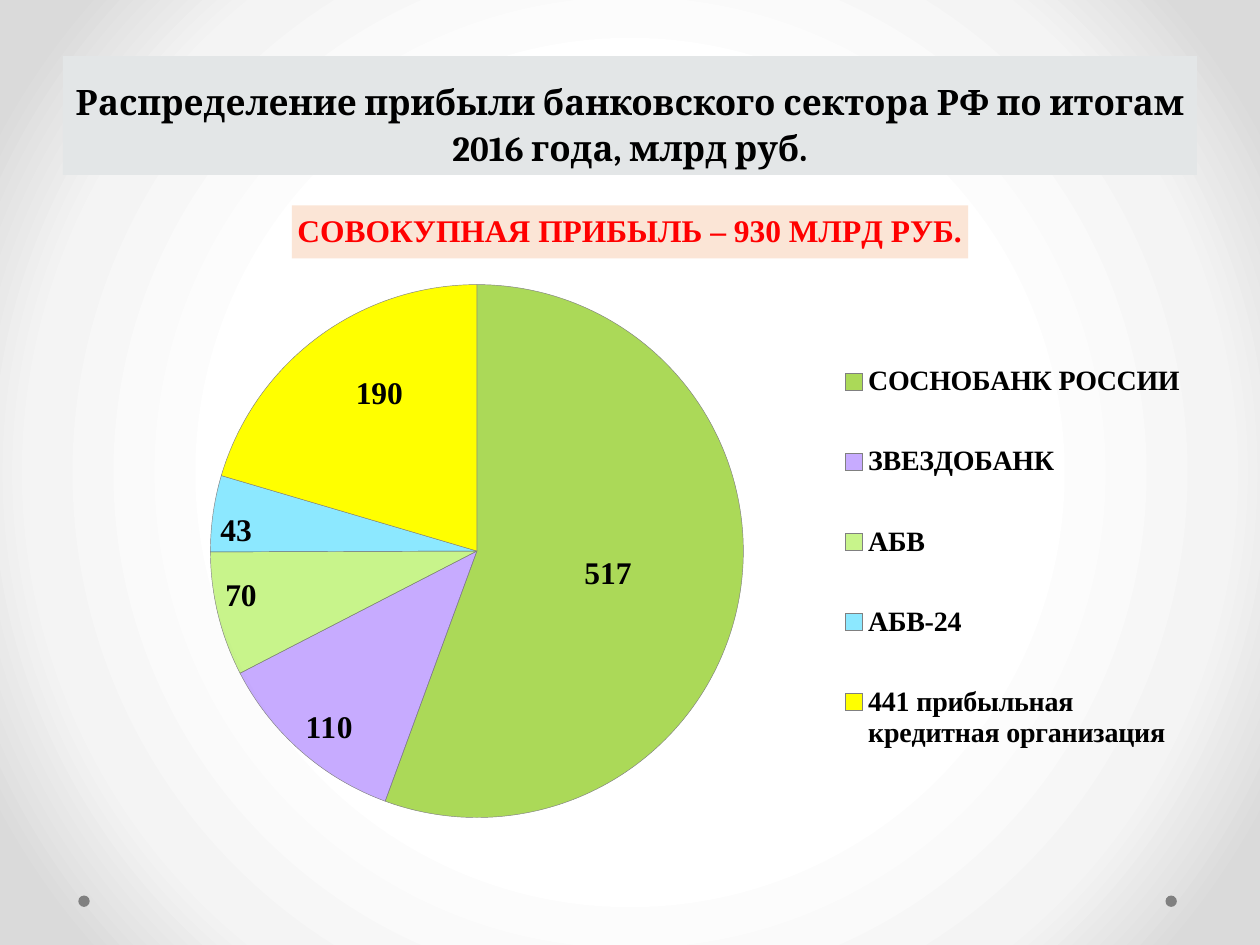
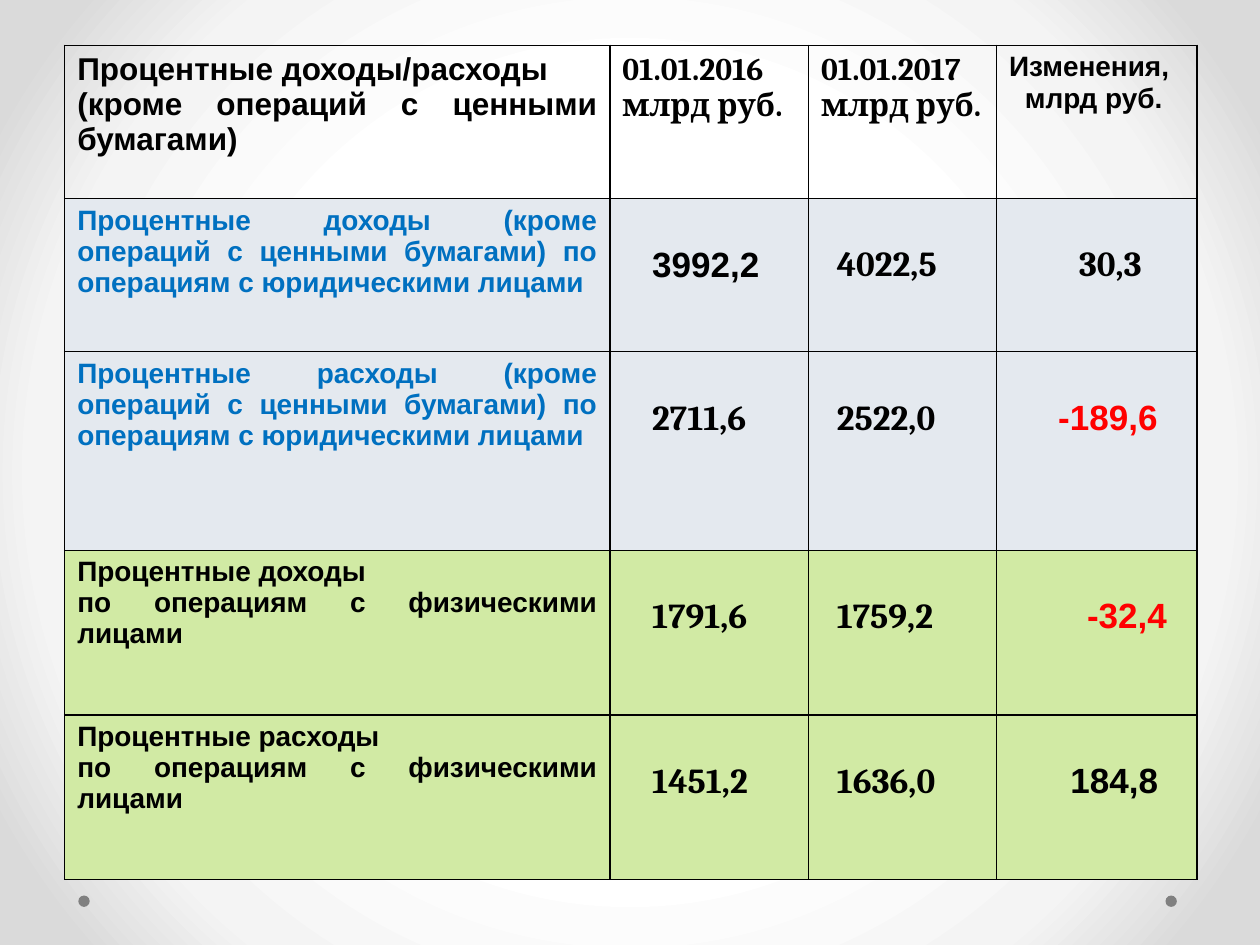
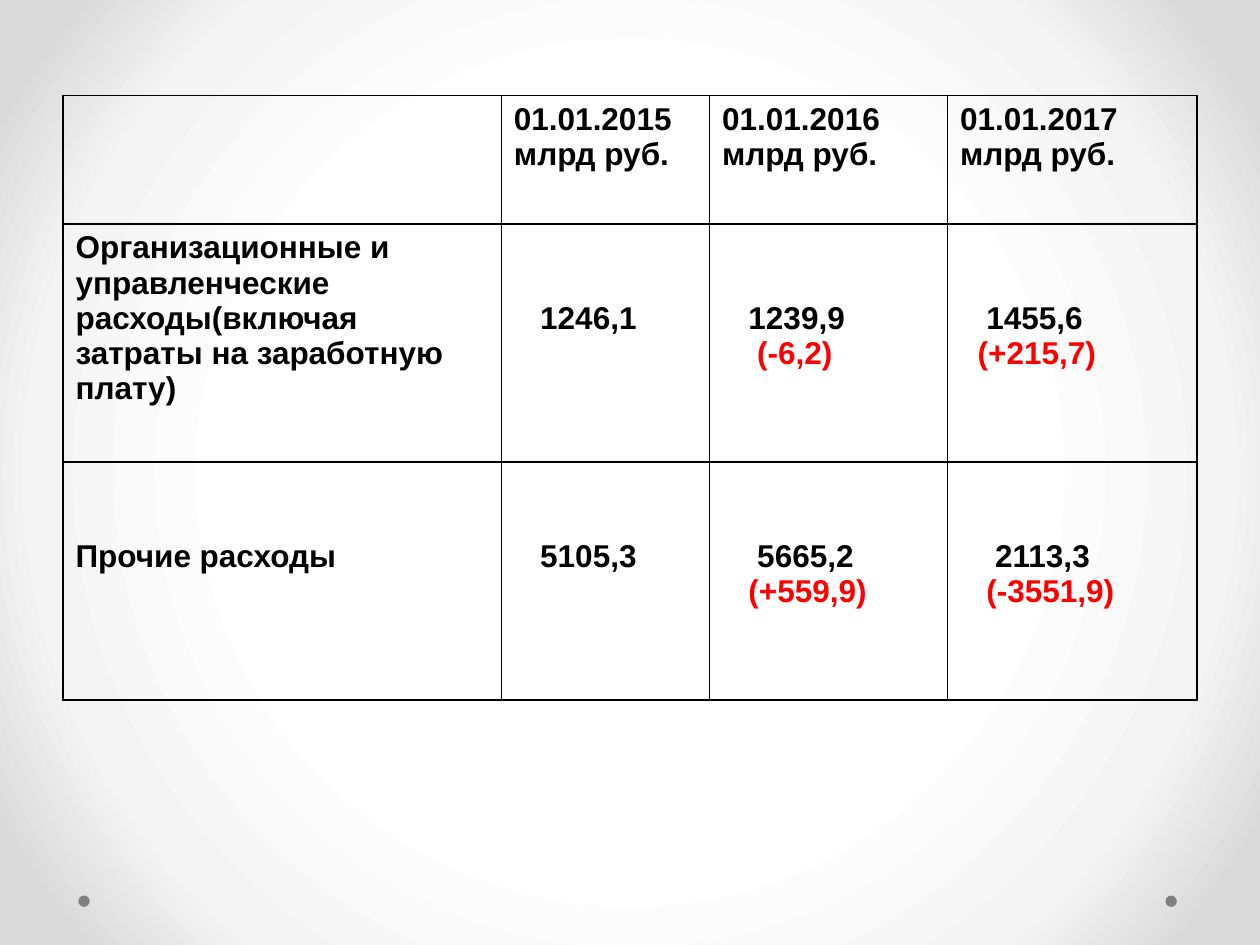
from dataclasses import dataclass
from typing import NamedTuple

from pptx import Presentation
from pptx import oxml as ox
from pptx.chart import data as cd
from pptx.dml import color as dc
from pptx.enum import chart as ec, shapes, text
from pptx.oxml import ns
from pptx.util import Pt

HUES = {
    "ink": "000000", "red": "FF0000", "blue": "0070C0", "dot": "808080",
    "band": "E3E6E7", "peach": "FBE5D6", "cool": "E4E9EF", "lime": "D1EAA4",
    "green": "ABD958", "violet": "9966FF", "leaf": "9BEB2D",
    "sky": "00CCFF", "yellow": "FFFF00",
    "white": "FFFFFF", "pale": "F4F4F4", "gray": "DADADA",
}
STOPS = ((50, "white"), (76, "pale"), (92, "gray"))
SANS, SERIF, ROMAN = "Arial", "Cambria", "Times New Roman"
JUST = text.PP_ALIGN.JUSTIFY
INSIDE, CENTER = ec.XL_LABEL_POSITION.INSIDE_END, ec.XL_LABEL_POSITION.CENTER


class Box(NamedTuple):
    x: float
    y: float
    w: float
    h: float


class Line(NamedTuple):
    text: str
    dent: float = 0
    hue: str = "ink"


@dataclass
class Cell:
    lines: list[Line]
    size: float = 18
    font: str = SANS
    drop: float = 0
    align: text.PP_ALIGN | None = None
    fill: str = ""


@dataclass
class Slice:
    name: str
    value: int
    hue: str
    alpha: int = 100
    spot: ec.XL_LABEL_POSITION = INSIDE


DOTS = [Box(x, 511.75, 6.5, 6.5) for x in (44.75, 666)]
SLICES = [
    Slice("СОСНОБАНК РОССИИ", 517, "green", spot=CENTER),
    Slice("ЗВЕЗДОБАНК", 110, "violet", 55),
    Slice("АБВ", 70, "leaf", 55),
    Slice("АБВ-24", 43, "sky", 45),
    Slice("441 прибыльная кредитная организация", 190, "yellow"),
]


def rgb(hue: str) -> dc.RGBColor:
    return dc.RGBColor.from_string(HUES[hue])


def style(font, size: float, name: str, hue: str = "ink") -> None:
    font.size, font.name, font.bold = Pt(size), name, True
    font.color.rgb = rgb(hue)


def pts(box: Box) -> list[Pt]:
    return [Pt(n) for n in box]


def make(tag: str, **attrs):
    node = ox.xmlchemy.OxmlElement(tag)
    for key, val in attrs.items():
        node.set(key, str(val))
    return node


def nest(top, tag: str, **attrs):
    node = make(tag, **attrs)
    top.append(node)
    return node


def back(slide) -> None:
    slide.background.fill.gradient()
    grad = slide.element.xpath("p:cSld/p:bg//a:gradFill")[0]
    grad.clear()
    stops = nest(grad, "a:gsLst")
    for pos, hue in STOPS:
        stop = nest(stops, "a:gs", pos=pos * 1000)
        nest(stop, "a:srgbClr", val=HUES[hue])
    ring = nest(grad, "a:path", path="circle")
    nest(ring, "a:fillToRect", l=50000, t=50000, r=50000, b=50000)


def start(prs):
    slide = prs.slides.add_slide(prs.slide_layouts[6])
    back(slide)
    for box in DOTS:
        dot = slide.shapes.add_shape(shapes.MSO_SHAPE.OVAL, *pts(box))
        dot.shadow.inherit = False
        dot.fill.solid()
        dot.fill.fore_color.rgb = rgb("dot")
        dot.line.fill.background()
    return slide


def head(slide, words: str) -> None:
    box = slide.shapes.add_textbox(*pts(Box(36, 32, 648, 68)))
    box.fill.solid()
    box.fill.fore_color.rgb = rgb("band")
    frame = box.text_frame
    frame.word_wrap = True
    frame.vertical_anchor = text.MSO_ANCHOR.BOTTOM
    frame.text = words
    para = frame.paragraphs[0]
    para.alignment = text.PP_ALIGN.CENTER
    para.line_spacing = 1.1
    style(para.runs[0].font, 20, SERIF)


def place(node, index: int, **sizes: float) -> None:
    for old in node.findall(ns.qn("c:layout")):
        node.remove(old)
    layout = make("c:layout")
    spot = nest(layout, "c:manualLayout")
    if "w" in sizes:
        if index == 0:
            nest(spot, "c:layoutTarget", val="inner")
        for mode in ("c:xMode", "c:yMode"):
            nest(spot, mode, val="edge")
    for key, val in sizes.items():
        nest(spot, "c:" + key, val=val)
    node.insert(index, layout)


def pie(slide, words: str, parts: list[Slice]) -> None:
    data = cd.CategoryChartData(number_format="#,##0")
    data.categories = [part.name for part in parts]
    data.add_series("Series 1", [part.value for part in parts])
    chart = slide.shapes.add_chart(
        ec.XL_CHART_TYPE.PIE, *pts(Box(36, 106, 648, 376.5)), data).chart
    chart.font.size, chart.font.name = Pt(10), ROMAN
    chart.font.color.rgb = rgb("ink")

    chart.has_title = True
    title = chart.chart_title
    title.text_frame.text = words
    style(title.text_frame.paragraphs[0].runs[0].font, 18, ROMAN, "red")
    title.format.fill.solid()
    title.format.fill.fore_color.rgb = rgb("peach")

    chart.has_legend = True
    chart.legend.position = ec.XL_LEGEND_POSITION.RIGHT
    chart.legend.include_in_layout = False
    style(chart.legend.font, 16, ROMAN)

    plot = chart.plots[0]
    plot.vary_by_categories = True
    plot.has_data_labels = True
    tags = plot.data_labels
    tags.show_value = True
    tags.number_format, tags.number_format_is_linked = "#,##0", False
    tags.position = INSIDE
    style(tags.font, 18, ROMAN)

    for i, part in enumerate(parts):
        point = plot.series[0].points[i]
        point.format.fill.solid()
        point.format.fill.fore_color.rgb = rgb(part.hue)
        point.format.line.color.rgb = rgb("dot")
        point.format.line.width = Pt(0.25)
        style(point.data_label.font, 18, ROMAN)
        point.data_label.position = part.spot

    root = chart.element if hasattr(chart, "element") else chart._chartSpace
    for part, tint in zip(parts, root.xpath(".//c:dPt/c:spPr/a:solidFill/a:srgbClr")):
        if part.alpha < 100:
            nest(tint, "a:alpha", val=part.alpha * 1000)
    place(root.xpath("c:chart/c:plotArea")[0], 0, x=0.13, y=0.15, w=0.47, h=0.81)
    place(root.xpath("c:chart/c:legend")[0], 1, x=0.69, y=0.2, w=0.3, h=0.73)
    place(root.xpath(".//c:dLbl")[-1], 1, x=0.03, y=0.05)


def edge(cell) -> None:
    props = cell._tc.get_or_add_tcPr()
    for i, side in enumerate(("a:lnL", "a:lnR", "a:lnT", "a:lnB")):
        line = make(side, w=Pt(1))
        nest(nest(line, "a:solidFill"), "a:srgbClr", val=HUES["ink"])
        props.insert(i, line)


def write(cell, item: Cell) -> None:
    if item.fill:
        cell.fill.solid()
        cell.fill.fore_color.rgb = rgb(item.fill)
    else:
        cell.fill.background()
    edge(cell)
    cell.margin_top = Pt(3.6 + item.drop)
    cell.text_frame.text = "\n".join(line.text for line in item.lines)
    for para, line in zip(cell.text_frame.paragraphs, item.lines):
        para.alignment = item.align
        if line.dent:
            para._p.get_or_add_pPr().set("marL", str(Pt(line.dent)))
        for run in para.runs:
            style(run.font, item.size, item.font, line.hue)


def grid(slide, x: float, y: float, cols: list[float], rows: list[float],
         cells: list[list[Cell]]) -> None:
    box = Box(x, y, sum(cols), sum(rows))
    table = slide.shapes.add_table(len(rows), len(cols), *pts(box)).table
    table.first_row = table.horz_banding = False
    for col, width in zip(table.columns, cols):
        col.width = Pt(width)
    for row, height, items in zip(table.rows, rows, cells):
        row.height = Pt(height)
        for cell, item in zip(row.cells, items):
            write(cell, item)


def date(year: int, font: str = SANS) -> Cell:
    return Cell([Line(f"01.01.{year}"), Line("млрд руб.")], font=font)


def label(fill: str, hue: str, *words: str) -> Cell:
    return Cell([Line(w, hue=hue) for w in words], 16, align=JUST, fill=fill)


def value(fill: str, words: str, dent: float, font: str = SERIF,
          hue: str = "ink") -> Cell:
    return Cell([Line(words, dent, hue)], 20, font, 23.2, fill=fill)


def cost(*lines: Line) -> Cell:
    return Cell(list(lines), drop=40.4)


def rates() -> list[list[Cell]]:
    firms = "(кроме операций с ценными бумагами) по операциям с юридическими лицами"
    folk = "по операциям с физическими лицами"
    return [
        [Cell([Line("Процентные доходы/расходы"),
               Line("(кроме операций с ценными бумагами)")], align=JUST),
         date(2016, SERIF), date(2017, SERIF),
         Cell([Line("Изменения,"), Line("млрд руб.", 9)], 16, align=JUST)],
        [label("cool", "blue", "Процентные доходы " + firms),
         value("cool", "3992,2", 17, SANS), value("cool", "4022,5", 9),
         value("cool", "30,3", 40)],
        [label("cool", "blue", "Процентные расходы " + firms),
         value("cool", "2711,6", 17), value("cool", "2522,0", 9),
         value("cool", "-189,6", 28, SANS, "red")],
        [label("lime", "ink", "Процентные доходы", folk),
         value("lime", "1791,6", 17), value("lime", "1759,2", 9),
         value("lime", "-32,4", 44.5, SANS, "red")],
        [label("lime", "ink", "Процентные расходы", folk),
         value("lime", "1451,2", 17), value("lime", "1636,0", 9),
         value("lime", "184,8", 35, SANS)],
    ]


def costs() -> list[list[Cell]]:
    return [
        [Cell([]), date(2015), date(2016), date(2017)],
        [Cell([Line("Организационные и управленческие расходы(включая "
                    "затраты на заработную плату)")]),
         cost(Line("1246,1", 15)),
         cost(Line("1239,9", 15), Line("(-6,2)", 20, "red")),
         cost(Line("1455,6", 15), Line("(+215,7)", 10, "red"))],
        [cost(Line("Прочие расходы")),
         cost(Line("5105,3", 15)),
         cost(Line("5665,2", 20), Line("(+559,9)", 15, "red")),
         cost(Line("2113,3", 20), Line("(-3551,9)", 15, "red"))],
    ]


def main() -> None:
    prs = Presentation()
    prs.slide_width, prs.slide_height = Pt(720), Pt(540)
    slide = start(prs)
    head(slide, "Распределение прибыли банковского сектора РФ по итогам "
                "2016 года, млрд руб.")
    pie(slide, "СОВОКУПНАЯ ПРИБЫЛЬ – 930 МЛРД РУБ.", SLICES)
    grid(start(prs), 37, 26, [311.5, 113.5, 107.5, 114.5],
         [87.5, 87.5, 113.5, 94, 94], rates())
    grid(start(prs), 36, 54.5, [250.5, 119, 136, 142.5], [73.5, 136, 136], costs())
    prs.save("out.pptx")


if __name__ == "__main__":
    main()
